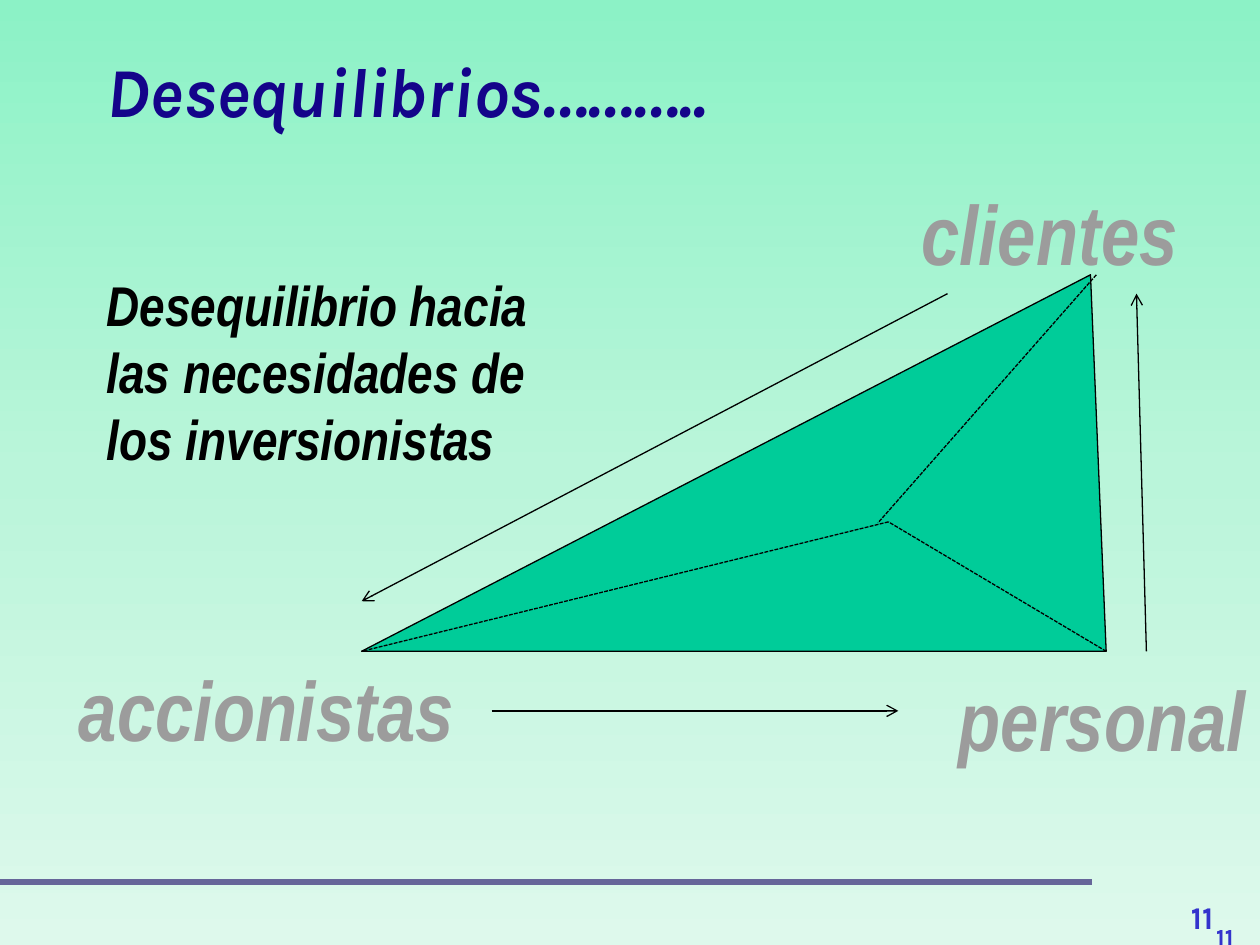
from lxml import etree
from pptx import Presentation
from pptx.dml.color import RGBColor
from pptx.enum.dml import MSO_LINE
from pptx.enum.shapes import MSO_CONNECTOR, MSO_SHAPE
from pptx.enum.text import MSO_ANCHOR, PP_ALIGN
from pptx.oxml.ns import qn
from pptx.util import Cm, Pt

STRAIGHT = MSO_CONNECTOR.STRAIGHT
TRIANGLE = MSO_SHAPE.ISOSCELES_TRIANGLE
DASH = MSO_LINE.SQUARE_DOT
LEFT, CENTER, RIGHT = PP_ALIGN.LEFT, PP_ALIGN.CENTER, PP_ALIGN.RIGHT
TOP, MIDDLE = MSO_ANCHOR.TOP, MSO_ANCHOR.MIDDLE

COLORS = {
    "rule": "666699", "number": "3333CC", "title": "14048A",
    "label": "9C9C9C", "triangle": "00CC99", "black": "000000",
}
BACKGROUND = ["8CF2C6", "BAF5DA", "DEF9EC"]

presentation = Presentation()
presentation.slide_width = Cm(25.4)
presentation.slide_height = Cm(19.05)
slide = presentation.slides.add_slide(presentation.slide_layouts[6])


def add_text(text, left, top, width, height, size, color, font="Arial Narrow",
             italic=True, align=LEFT, anchor=TOP, wrap=True, shadow=False):
    box = slide.shapes.add_textbox(Cm(left), Cm(top), Cm(width), Cm(height))
    frame = box.text_frame
    frame.word_wrap = wrap
    frame.vertical_anchor = anchor
    paragraph = frame.paragraphs[0]
    paragraph.alignment = align
    run = paragraph.add_run()
    run.text = text
    run.font.name = font
    run.font.size = Pt(size)
    run.font.bold = True
    run.font.italic = italic
    run.font.color.rgb = RGBColor.from_string(COLORS[color])
    if shadow:
        effects = etree.Element(qn("a:effectLst"))
        outer = etree.SubElement(effects, qn("a:outerShdw"), dist="38100", dir="2700000")
        etree.SubElement(outer, qn("a:srgbClr"), val="C0C0C0")
        run.font.fill._xPr.find(qn("a:solidFill")).addnext(effects)


def add_line(start, end, color="black", width=0.75, dash=None, arrow=False):
    line = slide.shapes.add_connector(STRAIGHT, *(Cm(value) for value in start + end))
    line.line.color.rgb = RGBColor.from_string(COLORS[color])
    line.line.width = Pt(width)
    if dash:
        line.line.dash_style = dash
    if arrow:
        etree.SubElement(line.line._get_or_add_ln(), qn("a:tailEnd"), type="arrow")
    etree.SubElement(line._element.spPr, qn("a:effectLst"))


# Background gradient, top to bottom
fill = slide.background.fill
fill.gradient()
fill.gradient_angle = 270
stops = slide.background._cSld.find(".//" + qn("a:gsLst"))
for stop in list(stops):
    stops.remove(stop)
for index, color in enumerate(BACKGROUND):
    stop = etree.SubElement(stops, qn("a:gs"), pos=str(index * 50000))
    etree.SubElement(stop, qn("a:srgbClr"), val=color)

# Footer rule and page numbers
add_line((0, 17.78), (22.02, 17.78), color="rule", width=3)
for left, top, size in [(18.21, 18.03, 18), (18.62, 18.44, 14)]:
    add_text("11", left, top, 6.5, 0.89, size, "number", font="Karla",
             italic=False, align=RIGHT, anchor=MIDDLE)

# Title
add_text("Desequilibrios………..", 1.9, 0.83, 21.72, 1.96, 40, "title",
         font="Karla", shadow=True)

# Triangle
triangle = slide.shapes.add_shape(TRIANGLE, Cm(7.29), Cm(5.54), Cm(15.01), Cm(7.59))
triangle.adjustments[0] = 0.979
triangle.shadow.inherit = False
triangle.fill.solid()
triangle.fill.fore_color.rgb = RGBColor.from_string(COLORS["triangle"])
triangle.line.color.rgb = RGBColor.from_string(COLORS["black"])
triangle.line.width = Pt(0.75)

# Corner labels
for text, left, top, width in [
    ("clientes", 18.29, 3.53, 5.74),
    ("personal", 19.05, 13.34, 6.35),
    ("accionistas", 1.3, 13.13, 8.15),
]:
    add_text(text, left, top, width, 2.31, 48, "label", align=CENTER, wrap=False)

# Dashed lines from the inner point to the corners
inner_point = (17.91, 10.52)
add_line(inner_point, (7.29, 13.13), dash=DASH)
add_line((22.1, 5.54), (17.7, 10.54), dash=DASH)
add_line((22.3, 13.13), inner_point, dash=DASH)

# Explanation
add_text("Desequilibrio hacia las necesidades de los inversionistas",
         1.9, 5.33, 9.6, 4.37, 32, "black")

# Arrows around the triangle
for start, end in [
    ((19.1, 5.92), (7.29, 12.12)),
    ((9.91, 14.33), (18.11, 14.33)),
    ((23.11, 13.13), (22.91, 5.92)),
]:
    add_line(start, end, arrow=True)

presentation.save("out.pptx")
